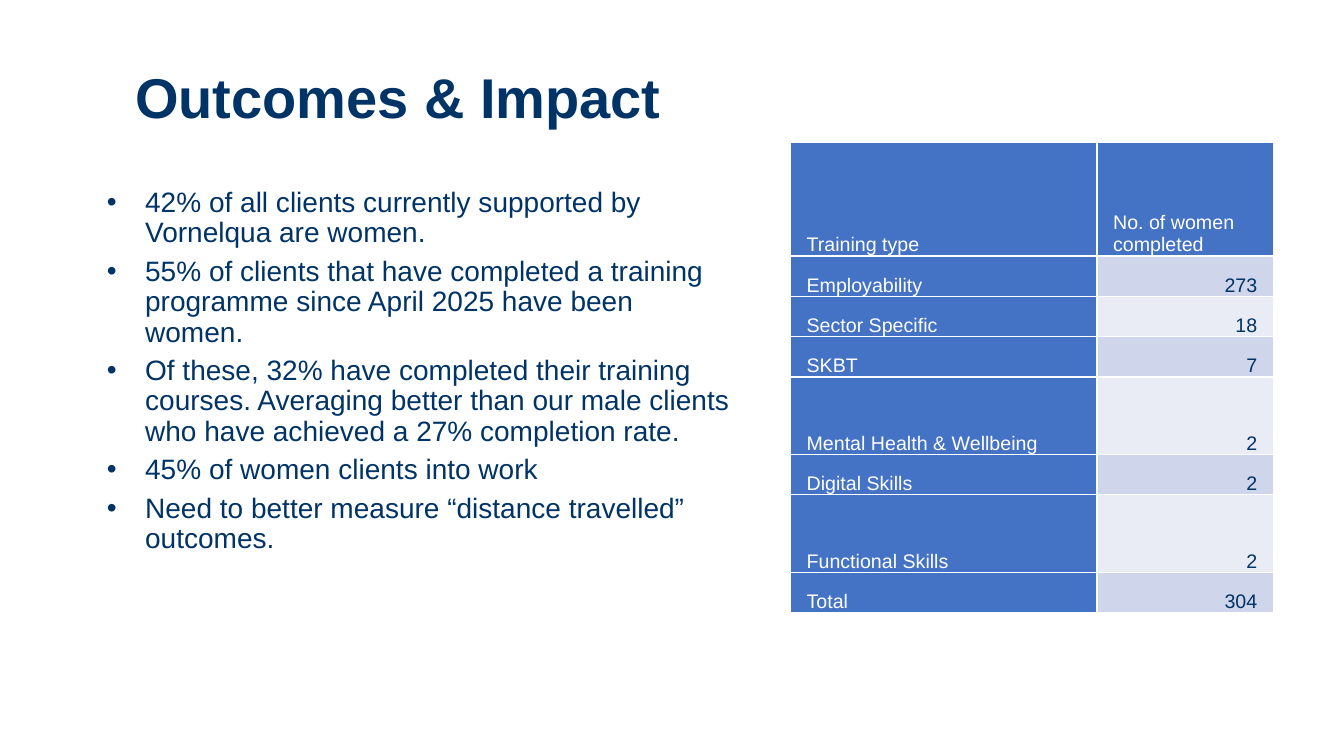
from lxml.etree import SubElement
from pptx import Presentation
from pptx.dml.color import RGBColor
from pptx.enum.text import MSO_ANCHOR, MSO_AUTO_SIZE, PP_ALIGN
from pptx.oxml.ns import qn
from pptx.util import Inches, Pt

COLORS = {
    "navy": "003366",
    "white": "FFFFFF",
    "blue": "4472C4",
    "band_dark": "CFD5EA",
    "band_light": "E9EBF5",
}


def set_text(p, text, size, color, bold=False):
    r = p.add_run()
    r.text = text
    for name, value in {"name": "Arial", "size": Pt(size), "bold": bold}.items():
        setattr(r.font, name, value)
    r.font.color.rgb = RGBColor.from_string(COLORS[color])


def add_borders(cell):
    tcPr = cell._tc.get_or_add_tcPr()
    for i, side in enumerate(("lnL", "lnR", "lnT", "lnB")):
        ln = tcPr.makeelement(qn(f"a:{side}"), {"w": str(Pt(1))})
        fill = SubElement(ln, qn("a:solidFill"))
        SubElement(fill, qn("a:srgbClr"), val=COLORS["white"])
        tcPr.insert(i, ln)


prs = Presentation()
prs.slide_width, prs.slide_height = Inches(13.33), Inches(7.5)
s = prs.slides.add_slide(prs.slide_layouts[1])
title, body = s.shapes.title, s.placeholders[1]

for sp, box, anchor in (
    (title, (1.24, 0.55, 5.82, 0.8), MSO_ANCHOR.BOTTOM),
    (body, (0.96, 1.82, 6.4, 4.68), MSO_ANCHOR.TOP),
):
    sp.left, sp.top, sp.width, sp.height = map(Inches, box)
    tf = sp.text_frame
    for name, value in {
        "word_wrap": True,
        "auto_size": MSO_AUTO_SIZE.NONE,
        "vertical_anchor": anchor,
    }.items():
        setattr(tf, name, value)

paragraph_format = {
    "alignment": PP_ALIGN.LEFT,
    "line_spacing": 0.9,
    "space_before": Pt(0),
    "space_after": Pt(6),
}

p = title.text_frame.paragraphs[0]
for name, value in paragraph_format.items():
    setattr(p, name, value)
set_text(p, "Outcomes & Impact", 40, "navy", True)

outcomes = [
    "42% of all clients currently supported by Vornelqua are women.",
    "55% of clients that have completed a training programme since April 2025 have been women.",
    "Of these, 32% have completed their training courses. Averaging better than our male clients "
    "who have achieved a 27% completion rate.",
    "45% of women clients into work",
    "Need to better measure “distance travelled” outcomes.",
]
tf = body.text_frame
for i, outcome in enumerate(outcomes):
    p = tf.add_paragraph() if i else tf.paragraphs[0]
    pPr = p._p.get_or_add_pPr()
    pPr.set("marL", str(Inches(0.38)))
    pPr.set("indent", str(Inches(-0.38)))
    SubElement(pPr, qn("a:buFont"), typeface="Arial")
    SubElement(pPr, qn("a:buChar"), char="•")
    for name, value in paragraph_format.items():
        setattr(p, name, value)
    set_text(p, outcome, 20, "navy")

training = [
    ("Training type", "No. of women completed", 1.13),
    ("Employability", "273", 0.4),
    ("Sector Specific", "18", 0.4),
    ("SKBT", "7", 0.4),
    ("Mental Health & Wellbeing", "2", 0.77),
    ("Digital Skills", "2", 0.4),
    ("Functional Skills", "2", 0.77),
    ("Total", "304", 0.4),
]
table = s.shapes.add_table(
    len(training), 2, Inches(7.84), Inches(1.41), Inches(4.79), Inches(4.67)
).table
for column, width in zip(table.columns, (3.04, 1.75)):
    column.width = Inches(width)

cell_format = {
    "vertical_anchor": MSO_ANCHOR.BOTTOM,
    "margin_left": Inches(0.16),
    "margin_right": Inches(0.16),
    "margin_top": 0,
    "margin_bottom": 0,
}
for row, (kind, count, height) in enumerate(training):
    table.rows[row].height = Inches(height)
    for col, text in enumerate((kind, count)):
        cell = table.cell(row, col)
        is_value = row > 0 and col > 0
        band = "band_dark" if row % 2 else "band_light"
        for name, value in cell_format.items():
            setattr(cell, name, value)
        cell.fill.solid()
        cell.fill.fore_color.rgb = RGBColor.from_string(COLORS[band if is_value else "blue"])
        add_borders(cell)
        p = cell.text_frame.paragraphs[0]
        p.alignment = PP_ALIGN.RIGHT if is_value else PP_ALIGN.LEFT
        set_text(p, text, 14, "navy" if is_value else "white")

prs.save("out.pptx")
